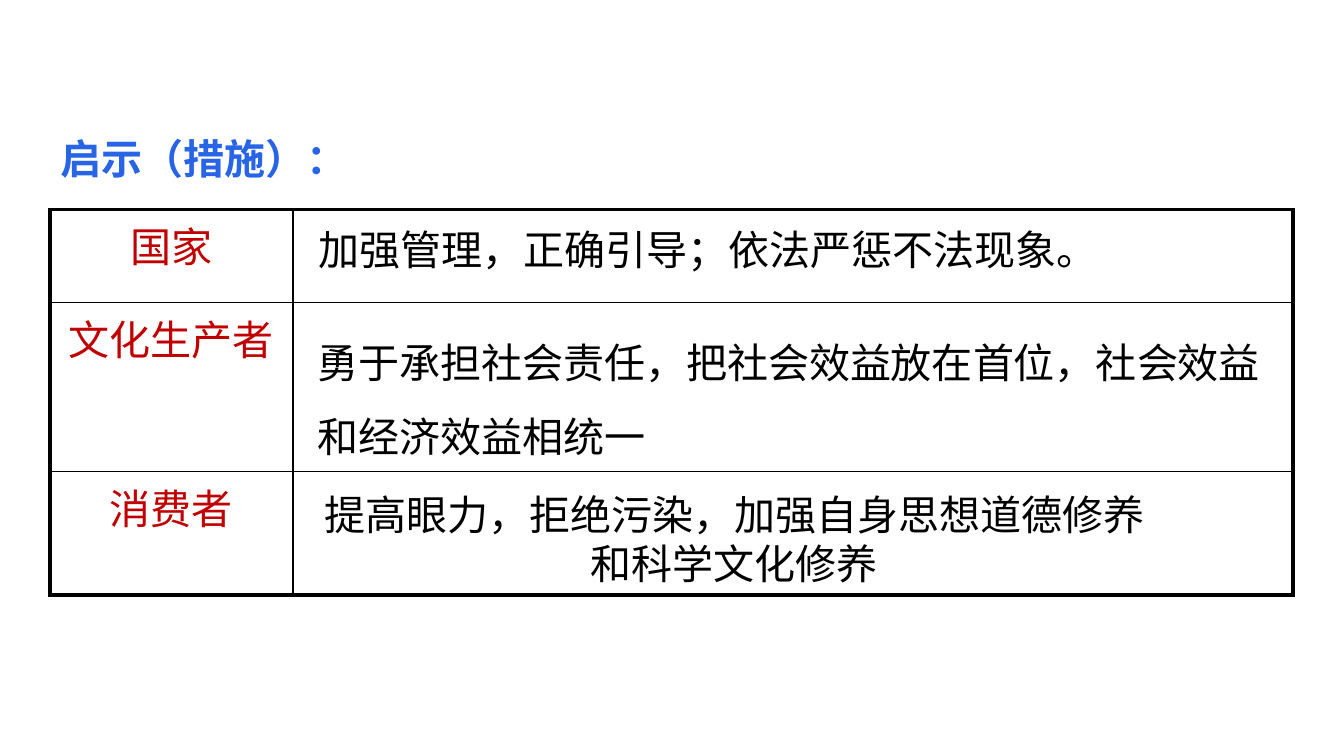
from dataclasses import dataclass

from lxml.etree import SubElement
from pptx import Presentation
from pptx.dml.color import RGBColor
from pptx.enum.text import MSO_AUTO_SIZE as AutoSize, PP_ALIGN as Align
from pptx.oxml.ns import qn
from pptx.util import Inches, Pt

BLACK = RGBColor(0x00, 0x00, 0x00)
RED = RGBColor(0xC0, 0x00, 0x00)
BLUE = RGBColor(0x28, 0x64, 0xE6)
CJK = "Noto Sans CJK SC"
LATIN = "Times New Roman"
SIZE = Pt(22)
OUTER, INNER = Pt(2.25), Pt(1)

ROLES = ["国家", "文化生产者", "消费者"]
COL_WIDTHS = [1.81, 7.44]
ROW_HEIGHTS = [0.69, 1.26, 0.92]


@dataclass
class Note:
    text: str
    left: float
    top: float
    width: float
    height: float
    color: RGBColor = BLACK
    bold: bool = False
    align: Align = Align.LEFT
    spacing: float = 1.5


NOTES = [
    Note("加强管理，正确引导；依法严惩不法现象。", 2.29, 1.45, 7.08, 0.64),
    Note("勇于承担社会责任，把社会效益放在首位，社会效益和经济效益相统一",
         2.28, 2.29, 7.26, 1.75),
    Note("提高眼力，拒绝污染，加强自身思想道德修养和科学文化修养",
         2.28, 3.6, 6.37, 0.83, align=Align.CENTER, spacing=1),
    Note("启示（措施）：", 0.37, 0.77, 2.47, 0.64, color=BLUE, bold=True),
]


def style(p, font: str, color: RGBColor, bold: bool = False) -> None:
    p.font.name = font
    p.font.size = SIZE
    p.font.bold = bold
    p.font.color.rgb = color


def set_border(cell, side: str, width: int) -> None:
    """Draw one cell edge; side is L, R, T or B."""
    ln = SubElement(cell._tc.get_or_add_tcPr(), qn(f"a:ln{side}"), w=str(width))
    fill = SubElement(ln, qn("a:solidFill"))
    SubElement(fill, qn("a:srgbClr"), val=str(BLACK))


def add_role_table(s) -> None:
    rows, cols = len(ROW_HEIGHTS), len(COL_WIDTHS)
    table = s.shapes.add_table(
        rows, cols, Inches(0.37), Inches(1.56),
        Inches(sum(COL_WIDTHS)), Inches(sum(ROW_HEIGHTS))).table
    table.first_row = table.horz_banding = False
    for col, width in zip(table.columns, COL_WIDTHS):
        col.width = Inches(width)
    for i, (row, height) in enumerate(zip(table.rows, ROW_HEIGHTS)):
        row.height = Inches(height)
        for j, cell in enumerate(row.cells):
            edges = {"L": j == 0, "R": j == cols - 1,
                     "T": i == 0, "B": i == rows - 1}
            for side, is_outer in edges.items():
                set_border(cell, side, OUTER if is_outer else INNER)
            cell.fill.background()
            cell.margin_left = cell.margin_right = Inches(0.1)
            cell.margin_top = cell.margin_bottom = Inches(0.04)
    for i, role in enumerate(ROLES):
        p = table.cell(i, 0).text_frame.paragraphs[0]
        p.text = role
        p.alignment = Align.CENTER
        p.space_before = Pt(4.4)
        style(p, CJK, RED)


def add_note(s, note: Note) -> None:
    tf = s.shapes.add_textbox(Inches(note.left), Inches(note.top),
                              Inches(note.width), Inches(note.height)).text_frame
    tf.word_wrap = True
    tf.auto_size = AutoSize.SHAPE_TO_FIT_TEXT
    tf.margin_left = tf.margin_right = Inches(0.08)
    tf.margin_top = tf.margin_bottom = Inches(0.04)
    p = tf.paragraphs[0]
    p.text = note.text
    p.alignment = note.align
    p.line_spacing = note.spacing
    style(p, LATIN, note.color, note.bold)


def main() -> None:
    prs = Presentation()
    prs.slide_width = Inches(10)
    prs.slide_height = prs.slide_width * 9 // 16
    s = prs.slides.add_slide(prs.slide_layouts[6])
    add_role_table(s)
    for note in NOTES:
        add_note(s, note)
    prs.save("out.pptx")


if __name__ == "__main__":
    main()
